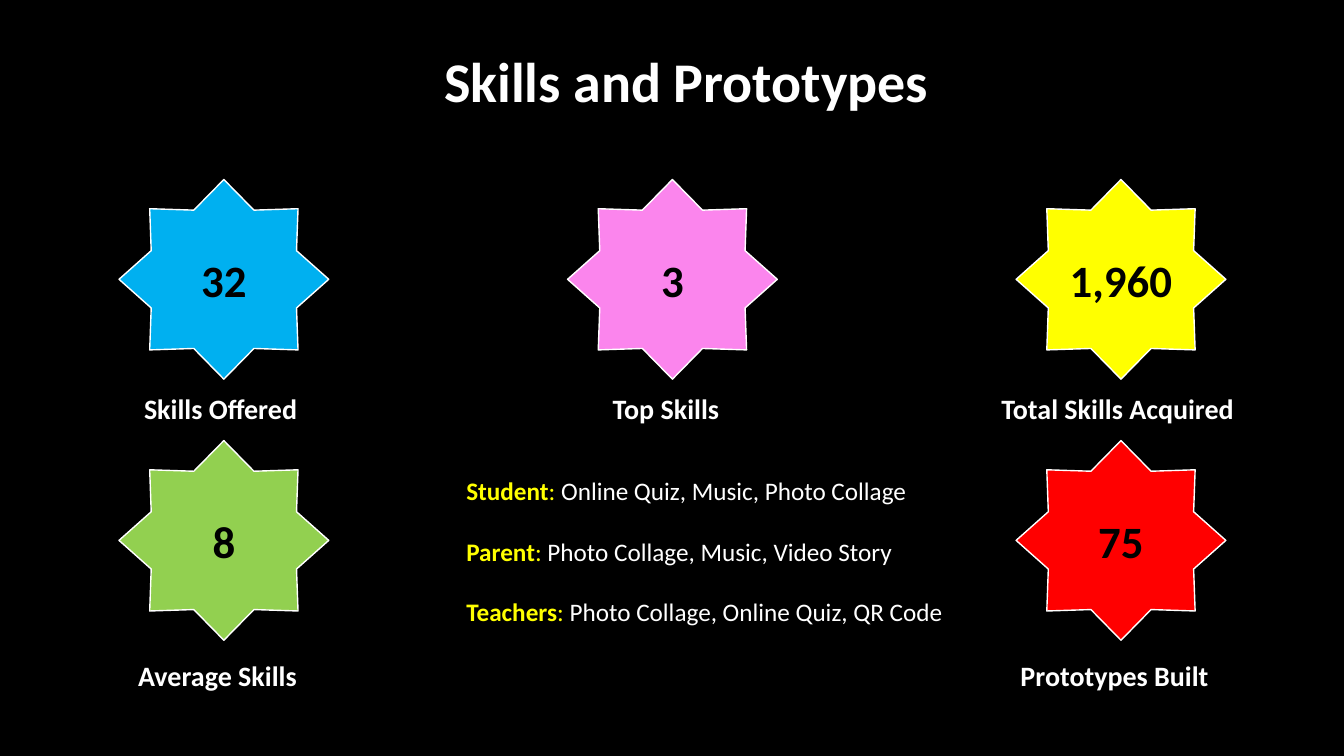
from pptx import Presentation
from pptx.dml.color import RGBColor
from pptx.enum import shapes, text
from pptx.util import Pt

FONT = "Calibri"
BLACK = RGBColor(0x00, 0x00, 0x00)
WHITE = RGBColor(0xFF, 0xFF, 0xFF)
YELLOW = RGBColor(0xFF, 0xFF, 0x00)
BLUE = RGBColor(0x00, 0xB0, 0xF0)
PINK = RGBColor(0xFB, 0x85, 0xED)
GREEN = RGBColor(0x92, 0xD0, 0x50)
RED = RGBColor(0xFF, 0x00, 0x00)

# Grid of stars, in points
LEFT, COLUMN_STEP = 85, 320.4
TOP, ROW_STEP = 128.2, 186.5
STAR_WIDTH, STAR_HEIGHT = 149.8, 142.6
LABEL_WIDTH, LABEL_HEIGHT = 205.2, 31.7

# Column, row, value, label, colour, extra right inset of the label
STATS = [
    (0, 0, "32", "Skills Offered", BLUE, 4.5),
    (1, 0, "3", "Top Skills", PINK, 9),
    (2, 0, "1,960", "Total Skills Acquired", YELLOW, 4.5),
    (0, 1, "8", "Average Skills", GREEN, 9),
    (2, 1, "75", "Prototypes Built", RED, 9),
]
TOP_SKILLS = [
    ("Student", "Online Quiz, Music, Photo Collage"),
    ("Parent", "Photo Collage, Music, Video Story"),
    ("Teachers", "Photo Collage, Online Quiz, QR Code"),
]


def style_run(run, size, color, bold=True):
    run.font.name = FONT
    run.font.size = Pt(size)
    run.font.color.rgb = color
    run.font.bold = bold


def set_centered(shape, wording, size, color):
    shape.text_frame.word_wrap = True
    shape.text_frame.text = wording
    paragraph = shape.text_frame.paragraphs[0]
    paragraph.alignment = text.PP_ALIGN.CENTER
    style_run(paragraph.runs[0], size, color)


def add_box(slide, left, top, width, height):
    return slide.shapes.add_textbox(Pt(left), Pt(top), Pt(width), Pt(height))


def add_title(slide, left, top, width, height):
    title = add_box(slide, left, top, width, height)
    set_centered(title, "Skills and Prototypes", 40, WHITE)
    title.text_frame.vertical_anchor = text.MSO_ANCHOR.MIDDLE
    title.text_frame.paragraphs[0].line_spacing = 0.9


def add_stat(slide, left, top, label_offset, value, label, color, inset):
    # Star with its value
    star = slide.shapes.add_shape(
        shapes.MSO_SHAPE.STAR_8_POINT,
        Pt(left), Pt(top), Pt(STAR_WIDTH), Pt(STAR_HEIGHT))
    star.shadow.inherit = False
    star.fill.solid()
    star.fill.fore_color.rgb = color
    star.line.color.rgb = WHITE
    star.line.width = Pt(1)
    set_centered(star, value, 32, BLACK)
    star.text_frame.vertical_anchor = text.MSO_ANCHOR.MIDDLE

    # Label centred under the star
    caption = add_box(slide, left + (STAR_WIDTH - LABEL_WIDTH) / 2,
                      top + label_offset, LABEL_WIDTH, LABEL_HEIGHT)
    set_centered(caption, label, 20, WHITE)
    caption.text_frame.margin_right = Pt(7.2 + inset)


def add_top_skills(slide, left, top, width, height):
    frame = add_box(slide, left, top, width, height).text_frame
    frame.word_wrap = True
    frame.margin_left = Pt(11.3)
    for index, (group, skills) in enumerate(TOP_SKILLS):
        paragraph = frame.add_paragraph() if index else frame.paragraphs[0]
        if index:
            paragraph.space_before = Pt(21.5)
        for wording, color, bold in ((group, YELLOW, True),
                                     (": ", YELLOW, False),
                                     (skills, WHITE, False)):
            run = paragraph.add_run()
            run.text = wording
            style_run(run, 18, color, bold)


def main():
    presentation = Presentation()
    presentation.slide_width, presentation.slide_height = Pt(960), Pt(540)
    slide = presentation.slides.add_slide(presentation.slide_layouts[6])
    slide.background.fill.solid()
    slide.background.fill.fore_color.rgb = BLACK

    add_title(slide, 130.3, 17.3, 720, 86.4)
    for column, row, value, label, color, inset in STATS:
        add_stat(slide, LEFT + column * COLUMN_STEP, TOP + row * ROW_STEP,
                 (147.6, 152)[row], value, label, color, inset)
    add_top_skills(slide, 321.8, 336.2, 375.8, 116.6)
    presentation.save("out.pptx")


if __name__ == "__main__":
    main()
